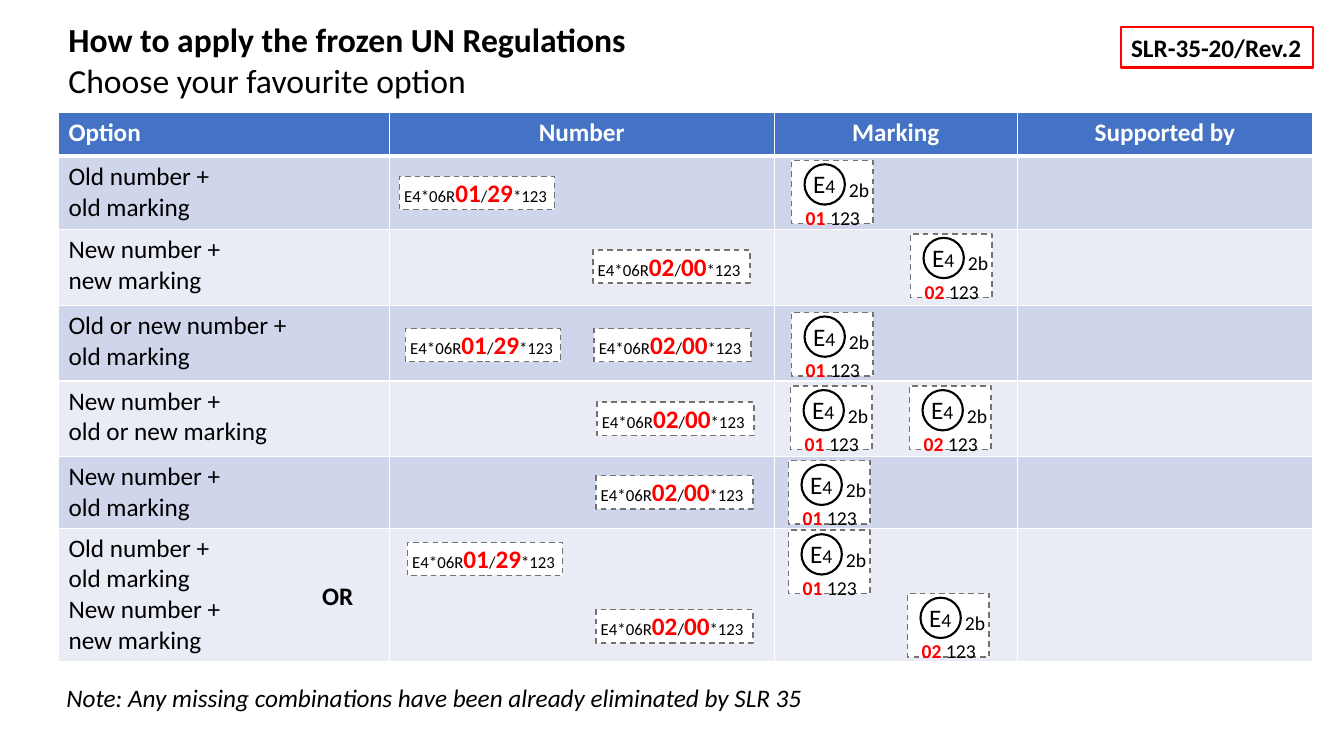
from typing import NamedTuple

from lxml.etree import SubElement
from pptx import Presentation
from pptx.dml.color import RGBColor
from pptx.enum.dml import MSO_LINE
from pptx.enum.shapes import MSO_SHAPE
from pptx.enum.text import MSO_ANCHOR, MSO_AUTO_SIZE, PP_ALIGN
from pptx.oxml.ns import qn
from pptx.util import Inches, Pt

BLACK = RGBColor(0x00, 0x00, 0x00)
WHITE = RGBColor(0xFF, 0xFF, 0xFF)
RED = RGBColor(0xFF, 0x00, 0x00)
GREY = RGBColor(0x76, 0x71, 0x71)
HEADER_BLUE = RGBColor(0x44, 0x72, 0xC4)
BAND_DARK = RGBColor(0xCF, 0xD5, 0xEA)
BAND_LIGHT = RGBColor(0xE9, 0xEB, 0xF5)
FONT = "Calibri"


class Number(NamedTuple):
    left: float
    top: float
    series: str
    supplement: str
    width: float


class Marking(NamedTuple):
    left: float
    top: float
    series: str


def old_number(left: float, top: float) -> Number:
    return Number(left, top, "01", "29", 1.54)


def new_number(left: float, top: float) -> Number:
    return Number(left, top, "02", "00", 1.56)


NUMBERS = [
    old_number(3.96, 1.75),
    new_number(5.88, 2.48),
    old_number(4.02, 3.26), new_number(5.89, 3.26),
    new_number(5.92, 3.99),
    new_number(5.91, 4.72),
    old_number(4.04, 5.38), new_number(5.91, 6.05),
]
MARKINGS = [
    Marking(7.85, 1.59, "01"),
    Marking(9.03, 2.32, "02"),
    Marking(7.85, 3.10, "01"),
    Marking(7.84, 3.83, "01"), Marking(9.02, 3.83, "02"),
    Marking(7.82, 4.57, "01"),
    Marking(7.82, 5.26, "01"), Marking(9.00, 5.89, "02"),
]

HEADINGS = ["Option", "Number", "Marking", "Supported by"]
OPTIONS = [
    ["Old number +", "old marking"],
    ["New number +", "new marking"],
    ["Old or new number +", "old marking"],
    ["New number +", "old or new marking"],
    ["New number +", "old marking"],
    ["Old number +", "old marking", "New number +", "new marking"],
]
COLUMN_WIDTHS = [3.28, 3.82, 2.41, 2.93]
ROW_HEIGHTS = [0.43, 0.73, 0.75, 0.75, 0.75, 0.71, 1.32]


def write(para, text: str, *, size: float = 18, color: RGBColor = BLACK,
          bold: bool = False, italic: bool = False) -> None:
    span = para.add_run()
    span.text = text
    font = span.font
    font.name, font.size = FONT, Pt(size)
    font.bold, font.italic = bold, italic
    font.color.rgb = color


def add_text(shapes, left: float, top: float, width: float, height: float, *,
             align=PP_ALIGN.LEFT, wrap: bool = True, spacing=None):
    """Add a text box and return its first paragraph."""
    box = shapes.add_textbox(Inches(left), Inches(top), Inches(width), Inches(height))
    box.text_frame.word_wrap = wrap
    box.text_frame.auto_size = MSO_AUTO_SIZE.SHAPE_TO_FIT_TEXT
    para = box.text_frame.paragraphs[0]
    para.alignment = align
    if spacing:
        para.line_spacing = Pt(spacing)
    return para


def add_outline(shapes, kind, left: float, top: float, width: float, height: float, *,
                color: RGBColor, weight: float = 1.5, fill=None, dash=None):
    shape = shapes.add_shape(kind, Inches(left), Inches(top), Inches(width), Inches(height))
    shape.shadow.inherit = False
    if fill is None:
        shape.fill.background()
    else:
        shape.fill.solid()
        shape.fill.fore_color.rgb = fill
    shape.line.color.rgb = color
    shape.line.width = Pt(weight)
    if dash:
        shape.line.dash_style = dash
    return shape


def add_dashed_frame(shapes, left: float, top: float, width: float, height: float) -> None:
    add_outline(shapes, MSO_SHAPE.RECTANGLE, left, top, width, height,
                color=GREY, weight=1, fill=WHITE, dash=MSO_LINE.DASH)


def add_number(shapes, number: Number) -> None:
    left, top, series, supplement, width = number
    add_dashed_frame(shapes, left, top, width, 0.33)
    para = add_text(shapes, left - 0.05, top - 0.04, 1.72, 0.4)
    write(para, "E4*06R", size=12)
    write(para, series, color=RED, bold=True)
    write(para, "/", size=12)
    write(para, supplement, color=RED, bold=True)
    write(para, "*123", size=12)


def add_marking(shapes, marking: Marking) -> None:
    left, top, series = marking
    parts = shapes.add_group_shape().shapes
    add_dashed_frame(parts, left, top, 0.81, 0.63)

    country = add_text(parts, left + 0.05, top + 0.07, 0.55, 0.33, align=PP_ALIGN.CENTER)
    write(country, "E")
    write(country, "4", size=14)
    frame = parts[-1].text_frame
    frame.auto_size = MSO_AUTO_SIZE.NONE
    frame.vertical_anchor = MSO_ANCHOR.MIDDLE
    frame.margin_left = frame.margin_right = frame.margin_top = frame.margin_bottom = 0
    add_outline(parts, MSO_SHAPE.OVAL, left + 0.13, top + 0.04, 0.4, 0.4, color=BLACK)

    approval = add_text(parts, left - 0.26, top + 0.22, 1.34, 0.48,
                        align=PP_ALIGN.CENTER, spacing=30)
    write(approval, series, size=14, color=RED, bold=True)
    write(approval, " 123", size=14)
    category = add_text(parts, left + 0.45, top - 0.06, 0.44, 0.48,
                        align=PP_ALIGN.CENTER, spacing=30)
    write(category, "2b", size=14)


def style_cell(cell, fill: RGBColor, top: float = 1, bottom: float = 1) -> None:
    """Give the cell white borders, with widths in points, and a solid fill."""
    properties = cell._tc.get_or_add_tcPr()
    for tag, weight in (("a:lnL", 1), ("a:lnR", 1), ("a:lnT", top), ("a:lnB", bottom)):
        border = SubElement(properties, qn(tag), w=str(Pt(weight)))
        solid = SubElement(border, qn("a:solidFill"))
        SubElement(solid, qn("a:srgbClr"), val=str(WHITE))
    cell.fill.solid()
    cell.fill.fore_color.rgb = fill


def add_options_table(shapes) -> None:
    table = shapes.add_table(len(ROW_HEIGHTS), len(COLUMN_WIDTHS), Inches(0.58), Inches(1.12),
                             Inches(sum(COLUMN_WIDTHS)), Inches(sum(ROW_HEIGHTS))).table
    for column, width in zip(table.columns, COLUMN_WIDTHS):
        column.width = Inches(width)
    for row, height in zip(table.rows, ROW_HEIGHTS):
        row.height = Inches(height)

    for index, heading in enumerate(HEADINGS):
        cell = table.cell(0, index)
        style_cell(cell, HEADER_BLUE, bottom=3)
        para = cell.text_frame.paragraphs[0]
        para.alignment = PP_ALIGN.CENTER if index else PP_ALIGN.LEFT
        write(para, heading, color=WHITE, bold=True)

    for row, lines in enumerate(OPTIONS, start=1):
        for column in range(len(HEADINGS)):
            style_cell(table.cell(row, column), BAND_DARK if row % 2 else BAND_LIGHT,
                       top=3 if row == 1 else 1)
        frame = table.cell(row, 0).text_frame
        for index, line in enumerate(lines):
            write(frame.add_paragraph() if index else frame.paragraphs[0], line)


def main() -> None:
    deck = Presentation()
    deck.slide_width, deck.slide_height = Inches(13.33), Inches(7.5)
    page = deck.slides.add_slide(deck.slide_layouts[6])
    shapes = page.shapes

    title = add_text(shapes, 0.58, 0.14, 6.42, 0.91)
    write(title, "How to apply the frozen UN Regulations", size=24, bold=True)
    subtitle = shapes[-1].text_frame.add_paragraph()
    write(subtitle, "Choose your favourite option", size=24)

    add_options_table(shapes)
    for number in NUMBERS:
        add_number(shapes, number)
    for marking in MARKINGS:
        add_marking(shapes, marking)

    write(add_text(shapes, 2.91, 5.71, 0.88, 0.4, align=PP_ALIGN.CENTER), "OR", bold=True)
    note = add_text(shapes, 0.56, 6.72, 7.58, 0.4, wrap=False)
    write(note, "Note: Any missing combinations have been already eliminated by SLR 35", italic=True)

    reference = add_outline(shapes, MSO_SHAPE.RECTANGLE, 11.12, 0.27, 1.9, 0.4, color=RED)
    frame = reference.text_frame
    frame.word_wrap = False
    frame.auto_size = MSO_AUTO_SIZE.SHAPE_TO_FIT_TEXT
    frame.vertical_anchor = MSO_ANCHOR.TOP
    frame.paragraphs[0].alignment = PP_ALIGN.LEFT
    write(frame.paragraphs[0], "SLR-35-20/Rev.2", bold=True)

    deck.save("out.pptx")


if __name__ == "__main__":
    main()
